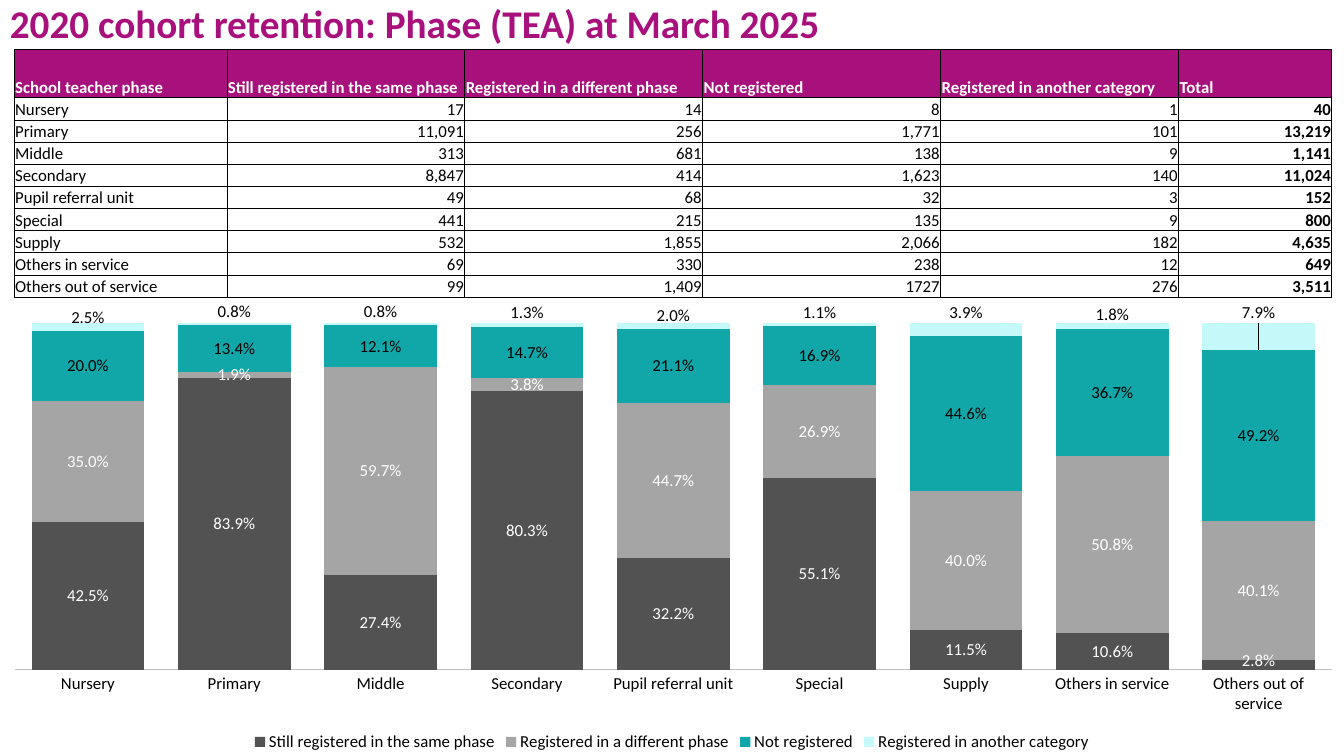
import dataclasses

import lxml.etree
import pptx
import pptx.chart.data
import pptx.dml.color
import pptx.enum.chart
import pptx.enum.text
import pptx.oxml
import pptx.oxml.ns
import pptx.util

Inches = pptx.util.Inches
Pt = pptx.util.Pt
ALIGN = pptx.enum.text.PP_ALIGN
LABEL = pptx.enum.chart.XL_LABEL_POSITION


@dataclasses.dataclass
class Theme:
    font: str = "Calibri"
    title_size: int = 28
    body_size: int = 12
    accent: str = "A8117C"
    ink: str = "000000"
    paper: str = "FFFFFF"
    axis: str = "BFBFBF"
    series: tuple = ("525252", "A5A5A5", "11A6A8", "C4F8F9")
    labels: tuple = ("FFFFFF", "FFFFFF", "000000", "000000")


HEADERS = ["School teacher phase", "Still registered in the same phase",
           "Registered in a different phase", "Not registered",
           "Registered in another category", "Total"]
PHASES = [
    ["Nursery", "17", "14", "8", "1", "40"],
    ["Primary", "11,091", "256", "1,771", "101", "13,219"],
    ["Middle", "313", "681", "138", "9", "1,141"],
    ["Secondary", "8,847", "414", "1,623", "140", "11,024"],
    ["Pupil referral unit", "49", "68", "32", "3", "152"],
    ["Special", "441", "215", "135", "9", "800"],
    ["Supply", "532", "1,855", "2,066", "182", "4,635"],
    ["Others in service", "69", "330", "238", "12", "649"],
    ["Others out of service", "99", "1,409", "1727", "276", "3,511"],
]
COLUMN_WIDTHS = [2.11, 2.36, 2.36, 2.36, 2.36, 1.52]
ROW_HEIGHTS = [0.48] + [0.22] * len(PHASES)
LABEL_SHIFTS = [(0, 8, -0.01), (3, 6, -0.02), (3, 8, -0.05)]
PERCENT = "0.0%"


def rgb(color):
    return pptx.dml.color.RGBColor.from_string(color)


def set_font(font, theme, size, color, bold=False):
    font.name = theme.font
    font.size = Pt(size)
    font.bold = bold
    font.color.rgb = rgb(color)


def write(frame, text, *, theme, size, color, bold=False, align=ALIGN.LEFT, spacing=None):
    para = frame.paragraphs[0]
    para.alignment = align
    para.line_spacing = spacing
    span = para.add_run()
    span.text = text
    set_font(span.font, theme, size, color, bold)


def chart_xml(markup):
    namespace = pptx.oxml.ns.nsdecls("c")
    return pptx.oxml.parse_xml(markup.replace(">", f" {namespace}>", 1))


def count(text):
    return int(text.replace(",", ""))


class RetentionPage:
    def __init__(self, page, theme):
        self.page = page
        self.theme = theme

    def title(self, text, left, top, width, height):
        box = self.page.shapes.add_textbox(Inches(left), Inches(top), Inches(width), Inches(height))
        box.text_frame.word_wrap = True
        write(box.text_frame, text, theme=self.theme, size=self.theme.title_size,
              color=self.theme.accent, bold=True, spacing=0.9)

    def border(self, cell):
        properties = cell._tc.get_or_add_tcPr()
        for position, side in enumerate(("lnL", "lnR", "lnT", "lnB")):
            line = lxml.etree.Element(pptx.oxml.ns.qn(f"a:{side}"), w=str(Pt(0.5)))
            fill = lxml.etree.SubElement(line, pptx.oxml.ns.qn("a:solidFill"))
            lxml.etree.SubElement(fill, pptx.oxml.ns.qn("a:srgbClr"), val=self.theme.ink)
            properties.insert(position, line)

    def cell(self, cell, text, header, column):
        theme = self.theme
        cell.margin_left = cell.margin_right = cell.margin_top = Inches(0.01)
        cell.margin_bottom = 0
        cell.vertical_anchor = pptx.enum.text.MSO_ANCHOR.BOTTOM
        if header:
            cell.fill.solid()
            cell.fill.fore_color.rgb = rgb(theme.accent)
        else:
            cell.fill.background()
        self.border(cell)
        write(cell.text_frame, text, theme=theme, size=theme.body_size,
              color=theme.paper if header else theme.ink,
              bold=header or column == len(HEADERS) - 1,
              align=ALIGN.LEFT if header or column == 0 else ALIGN.RIGHT)

    def table(self, left, top):
        rows = [HEADERS] + PHASES
        table = self.page.shapes.add_table(
            len(rows), len(HEADERS), Inches(left), Inches(top),
            Inches(sum(COLUMN_WIDTHS)), Inches(sum(ROW_HEIGHTS))).table
        for column, width in zip(table.columns, COLUMN_WIDTHS):
            column.width = Inches(width)
        for row, height in zip(table.rows, ROW_HEIGHTS):
            row.height = Inches(height)
        for row, texts in enumerate(rows):
            for column, text in enumerate(texts):
                self.cell(table.cell(row, column), text, row == 0, column)

    def chart(self, left, top, width, height):
        theme = self.theme
        data = pptx.chart.data.CategoryChartData(number_format=PERCENT)
        data.categories = [phase[0] for phase in PHASES]
        for column in range(1, 5):
            shares = [round(count(phase[column]) / count(phase[-1]), 3) for phase in PHASES]
            data.add_series(HEADERS[column], shares)
        chart = self.page.shapes.add_chart(
            pptx.enum.chart.XL_CHART_TYPE.COLUMN_STACKED_100,
            Inches(left), Inches(top), Inches(width), Inches(height), data).chart
        set_font(chart.font, theme, theme.body_size, theme.ink)
        chart.has_title = False
        chart.has_legend = True
        chart.legend.position = pptx.enum.chart.XL_LEGEND_POSITION.BOTTOM
        chart.legend.include_in_layout = False
        set_font(chart.legend.font, theme, theme.body_size, theme.ink)
        self.axes(chart)
        plot = chart.plots[0]
        plot.gap_width = 30
        plot.overlap = 100
        plot.vary_by_categories = False
        for index, series in enumerate(plot.series):
            series.format.fill.solid()
            series.format.fill.fore_color.rgb = rgb(theme.series[index])
            labels = series.data_labels
            labels.show_value = True
            labels.number_format = PERCENT
            labels.number_format_is_linked = False
            labels.position = self.label_position(index)
            set_font(labels.font, theme, theme.body_size, theme.labels[index])
        for index, point, shift in LABEL_SHIFTS:
            self.shift_label(chart, index, point, shift)
        self.plot_area(chart, 0.011, 0.057, 0.98, 0.756)

    def axes(self, chart):
        chart.value_axis.visible = False
        chart.value_axis.has_major_gridlines = False
        chart.value_axis.tick_labels.number_format = PERCENT
        chart.value_axis.tick_labels.number_format_is_linked = False
        axis = chart.category_axis
        axis.major_tick_mark = pptx.enum.chart.XL_TICK_MARK.NONE
        axis.format.line.color.rgb = rgb(self.theme.axis)
        axis.format.line.width = Pt(0.75)
        set_font(axis.tick_labels.font, self.theme, self.theme.body_size, self.theme.ink)

    def label_position(self, index):
        return LABEL.INSIDE_BASE if index == 3 else LABEL.CENTER

    def shift_label(self, chart, index, point, shift):
        label = chart.plots[0].series[index].points[point].data_label
        label.position = self.label_position(index)
        set_font(label.font, self.theme, self.theme.body_size, self.theme.labels[index])
        node = chart.element.xpath(f".//c:ser[c:idx/@val='{index}']//c:dLbl[c:idx/@val='{point}']")[0]
        node.insert(1, chart_xml(
            f'<c:layout><c:manualLayout><c:x val="0"/><c:y val="{shift}"/>'
            '</c:manualLayout></c:layout>'))
        number = lxml.etree.Element(pptx.oxml.ns.qn("c:numFmt"), formatCode=PERCENT, sourceLinked="0")
        node.insert(2, number)

    def plot_area(self, chart, left, top, width, height):
        area = chart.element.xpath(".//c:plotArea")[0]
        for layout in area.xpath("./c:layout"):
            area.remove(layout)
        area.insert(0, chart_xml(
            '<c:layout><c:manualLayout><c:layoutTarget val="inner"/>'
            '<c:xMode val="edge"/><c:yMode val="edge"/>'
            f'<c:x val="{left}"/><c:y val="{top}"/><c:w val="{width}"/><c:h val="{height}"/>'
            '</c:manualLayout></c:layout>'))


def main():
    deck = pptx.Presentation()
    deck.slide_width = Inches(13.33)
    deck.slide_height = Inches(7.5)
    retention = RetentionPage(deck.slides.add_slide(deck.slide_layouts[6]), Theme())
    retention.title("2020 cohort retention: Phase (TEA) at March 2025", 0, 0, 11.44, 0.55)
    retention.table(0.14, 0.49)
    retention.chart(0, 2.94, 13.33, 4.56)
    deck.save("out.pptx")


if __name__ == "__main__":
    main()
